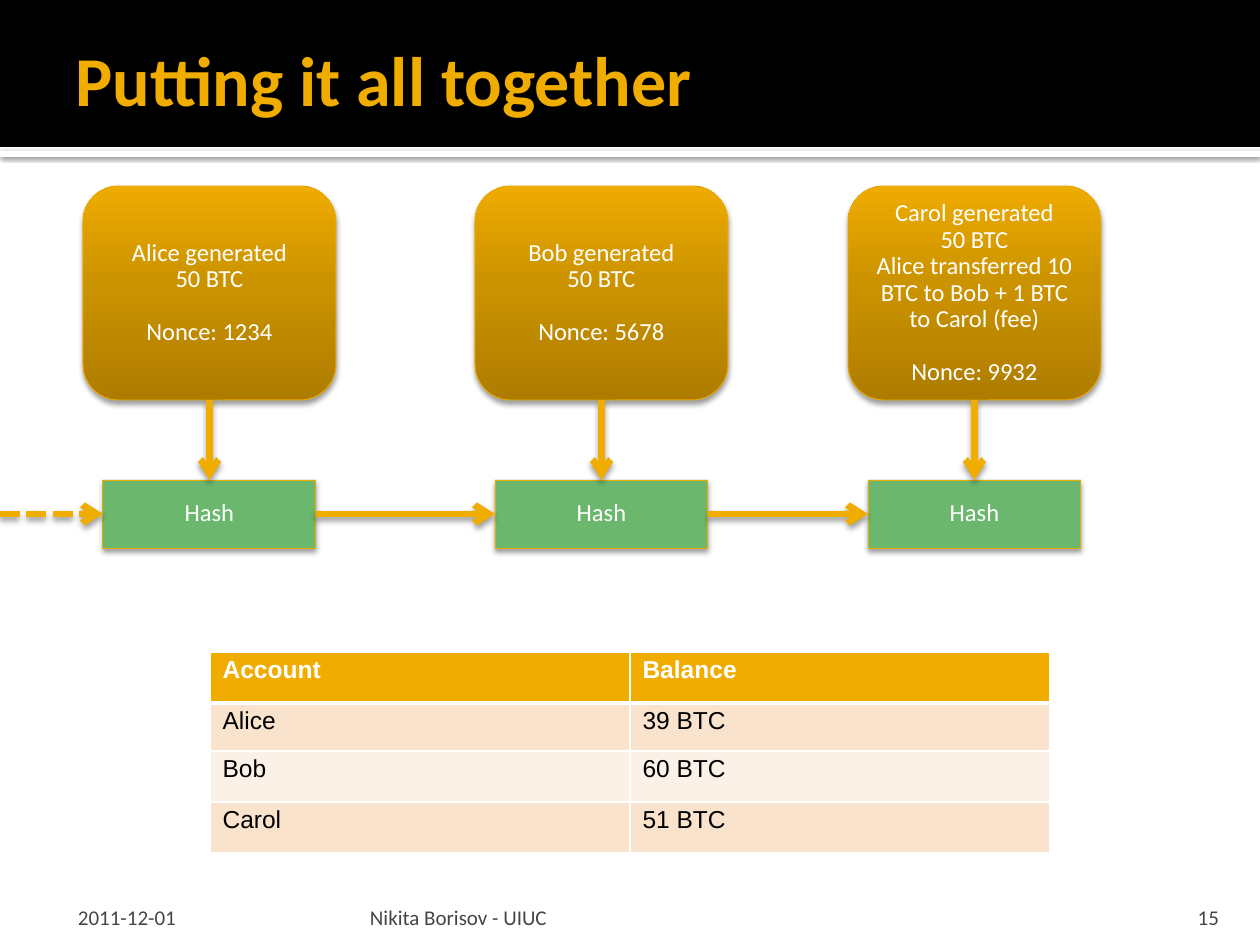
import pptx
import pptx.util
import pptx.dml.color
import pptx.enum.dml
import pptx.enum.shapes
import pptx.enum.text
import pptx.oxml.ns
from lxml import etree

RGB = pptx.dml.color.RGBColor
BLACK = RGB(0x00, 0x00, 0x00)
WHITE = RGB(0xFF, 0xFF, 0xFF)
GOLD = RGB(0xF0, 0xAD, 0x00)
EDGE = RGB(0xEB, 0xA9, 0x00)
GREEN = RGB(0x6B, 0xB7, 0x6D)
GREY = RGB(0x45, 0x45, 0x45)
PEACH = RGB(0xF9, 0xE3, 0xCC)
CREAM = RGB(0xFC, 0xF1, 0xE7)
GRADIENT = [(0, RGB(0xAE, 0x7D, 0x00)), (55, RGB(0xCC, 0x93, 0x00)),
            (100, RGB(0xEE, 0xAB, 0x00))]

SHAPES = pptx.enum.shapes.MSO_SHAPE
ANCHOR = pptx.enum.text.MSO_ANCHOR
ALIGN = pptx.enum.text.PP_ALIGN
Pt = pptx.util.Pt

# Blocks of the chain: left edge and lines of text
BLOCKS = [
    (83, ["Alice generated", "50 BTC", "Nonce: 1234"]),
    (475, ["Bob generated", "50 BTC", "Nonce: 5678"]),
    (848, ["Carol generated", "50 BTC",
           "Alice transferred 10 BTC to Bob + 1 BTC to Carol (fee)", "Nonce: 9932"]),
]
BALANCES = [("Account", "Balance"), ("Alice", "39 BTC"), ("Bob", "60 BTC"),
            ("Carol", "51 BTC")]


def px(*lengths):
    """Turn pixels (126 to the inch) into EMU."""
    return [pptx.util.Emu(round(length * 914400 / 126)) for length in lengths]


def add_xml(parent, tag, **attributes):
    child = etree.SubElement(parent, pptx.oxml.ns.qn("a:" + tag))
    for name, value in attributes.items():
        child.set(name, str(value))
    return child


def add_color(parent, color, **attributes):
    return add_xml(parent, "srgbClr", val=color, **attributes)


def add_shadow(shape, alpha, blur, distance):
    effects = add_xml(shape._element.spPr, "effectLst")
    shadow = add_xml(effects, "outerShdw", blurRad=Pt(blur), dist=Pt(distance),
                     dir=5400000, rotWithShape=0)
    add_xml(add_color(shadow, BLACK), "alpha", val=alpha * 1000)


def format_para(para, text, size, color, font="Calibri", align=ALIGN.LEFT, bold=False):
    para.text = text
    para.alignment = align
    para.font.size = Pt(size)
    para.font.name = font
    para.font.bold = bold
    para.font.color.rgb = color


def add_panel(page, kind, box, color=None, edge=None):
    shape = page.shapes.add_shape(kind, *px(*box))
    shape.shadow.inherit = False
    if color is not None:
        shape.fill.solid()
        shape.fill.fore_color.rgb = color
    if edge is None:
        shape.line.fill.background()
    else:
        shape.line.color.rgb = edge
        shape.line.width = Pt(0.5)
    return shape


def drop_effects(shape):
    properties = shape._element.spPr
    for effects in properties.findall(pptx.oxml.ns.qn("a:effectLst")):
        properties.remove(effects)


def add_node(page, kind, box, lines, color=None):
    """A shadowed shape with centred lines of text."""
    shape = add_panel(page, kind, box, color, EDGE)
    drop_effects(shape)
    add_shadow(shape, 38, 3.1, 2)
    frame = shape.text_frame
    frame.word_wrap = True
    frame.vertical_anchor = ANCHOR.MIDDLE
    for index, line in enumerate(lines):
        para = frame.add_paragraph() if index else frame.paragraphs[0]
        format_para(para, line, 14, WHITE, align=ALIGN.CENTER)
        para.line_spacing = 0.9
    return shape


def add_arrow(page, start, end, dashed=False):
    line = page.shapes.add_connector(pptx.enum.shapes.MSO_CONNECTOR.STRAIGHT,
                                     *px(*start, *end))
    line.line.color.rgb = GOLD
    line.line.width = Pt(3.78)
    if dashed:
        line.line.dash_style = pptx.enum.dml.MSO_LINE.SQUARE_DOT
    add_xml(line.line._get_or_add_ln(), "tailEnd", type="arrow")
    add_shadow(line, 38, 3.5, 2)


def add_header(page, width, height):
    rule = add_panel(page, SHAPES.RECTANGLE, (0, height + 4, width, 6), WHITE)
    drop_effects(rule)
    add_shadow(rule, 60, 2.5, 0.8)
    add_panel(page, SHAPES.RECTANGLE, (0, 0, width, height), BLACK)

    # Title, brought in front of the band
    title = page.shapes.title
    page.shapes._spTree.append(title._element)
    title.left, title.top, title.width, title.height = px(63, 10, width - 126, 136)
    frame = title.text_frame
    frame.vertical_anchor = ANCHOR.MIDDLE
    frame.margin_left, frame.margin_right = Pt(7.2), Pt(3.6)
    format_para(frame.paragraphs[0], "Putting it all together", 40, GOLD, bold=True)


def add_block(page, left, top, lines):
    """A transaction block with its hash below; gives the hash's left and right."""
    width, height, hash_width, hash_height, gap = 253, 214, 213, 68, 80
    block = add_node(page, SHAPES.ROUNDED_RECTANGLE, (left, top, width, height), lines)
    block.text_frame.paragraphs[-1].space_before = Pt(15)
    block.fill.gradient()
    block.fill.gradient_angle = 90
    stops = block._element.spPr.find(".//" + pptx.oxml.ns.qn("a:gsLst"))
    for stop in list(stops):
        stops.remove(stop)
    for position, color in GRADIENT:
        add_color(add_xml(stops, "gs", pos=position * 1000), color)

    hash_left = left + (width - hash_width) // 2
    hash_top = top + height + gap
    add_node(page, SHAPES.RECTANGLE, (hash_left, hash_top, hash_width, hash_height),
             ["Hash"], GREEN)
    center = left + width / 2
    add_arrow(page, (center, top + height), (center, hash_top))
    return hash_left, hash_left + hash_width, hash_top + hash_height / 2


def add_chain(page, top):
    previous = 0
    for index, (left, lines) in enumerate(BLOCKS):
        start, end, middle = add_block(page, left, top, lines)
        add_arrow(page, (previous, middle), (start, middle), dashed=index == 0)
        previous = end


def add_border(cell, side, width):
    line = add_xml(cell._tc.get_or_add_tcPr(), "ln" + side, w=Pt(width))
    add_color(add_xml(line, "solidFill"), WHITE)


def add_balances(page, left, top, width):
    heights = [51, 48, 51, 51]
    table = page.shapes.add_table(len(BALANCES), 2,
                                  *px(left, top, width, sum(heights))).table
    for row, (names, height) in enumerate(zip(BALANCES, heights)):
        table.rows[row].height = px(height)[0]
        for column, text in enumerate(names):
            cell = table.cell(row, column)
            for side in "LRTB":
                thick = (row, side) in [(0, "B"), (1, "T")]
                add_border(cell, side, 3 if thick else 1)
            cell.fill.solid()
            cell.fill.fore_color.rgb = GOLD if row == 0 else (CREAM, PEACH)[row % 2]
            para = cell.text_frame.paragraphs[0]
            format_para(para, text, 14, BLACK if row else WHITE, "Arial", bold=row == 0)
            para.line_spacing = 0.9


def add_footer(page, top, height):
    for left, width, text, align, inset in [
            (63, 294, "2011-12-01", ALIGN.LEFT, 15),
            (364, 758, "Nikita Borisov - UIUC", ALIGN.LEFT, 6),
            (1130, 101, "15", ALIGN.RIGHT, 12)]:
        frame = page.shapes.add_textbox(*px(left, top, width, height)).text_frame
        frame.word_wrap = True
        frame.vertical_anchor = ANCHOR.BOTTOM
        frame.margin_left = frame.margin_right = px(inset)[0]
        frame.margin_bottom = 0
        format_para(frame.paragraphs[0], text, 12, GREY, align=align)


def main():
    deck = pptx.Presentation()
    deck.slide_width, deck.slide_height = px(1260, 945)
    page = deck.slides.add_slide(deck.slide_layouts[5])
    add_header(page, 1260, 147)
    add_chain(page, 186)
    add_balances(page, 210, 652, 840)
    add_footer(page, 892, 38)
    deck.save("out.pptx")


if __name__ == "__main__":
    main()
